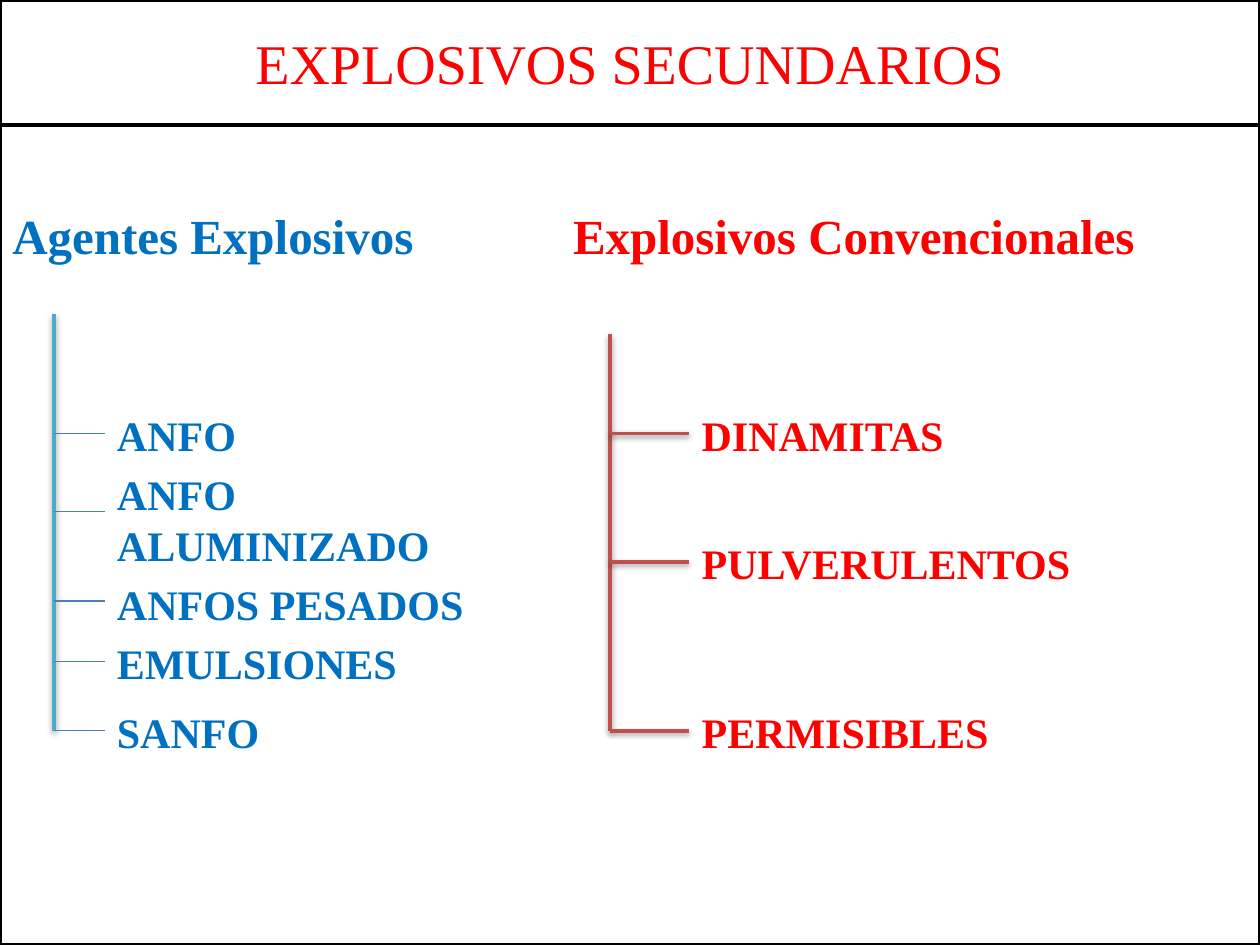
"""Build a slide that sorts secondary explosives into two bracketed lists."""
from lxml import etree
from pptx import Presentation
from pptx.dml.color import RGBColor
from pptx.enum.shapes import MSO_CONNECTOR, MSO_SHAPE
from pptx.enum.text import MSO_ANCHOR, PP_ALIGN
from pptx.oxml.ns import qn
from pptx.util import Inches, Pt

STRAIGHT = MSO_CONNECTOR.STRAIGHT
RECTANGLE = MSO_SHAPE.RECTANGLE
TOP, MIDDLE = MSO_ANCHOR.TOP, MSO_ANCHOR.MIDDLE
LEFT, CENTER = PP_ALIGN.LEFT, PP_ALIGN.CENTER
WHITE = RGBColor(0xFF, 0xFF, 0xFF)
BLACK = RGBColor(0x00, 0x00, 0x00)
RED = RGBColor(0xFF, 0x00, 0x00)
BLUE = RGBColor(0x00, 0x70, 0xC0)
TEAL = RGBColor(0x4B, 0xAC, 0xC6)
STEEL = RGBColor(0x4B, 0x7E, 0xBC)
BRICK = RGBColor(0xC0, 0x50, 0x4D)


def add_text(para, text, size, color, bold=True):
    span = para.add_run()
    span.text = text
    style = {"name": "Times New Roman", "size": Pt(size), "bold": bold}
    for name, value in style.items():
        setattr(span.font, name, value)
    span.font.color.rgb = color


def add_line(page, start, end, color, width, shadowed):
    line = page.shapes.add_connector(STRAIGHT, *map(Inches, start + end))
    line.line.color.rgb = color
    line.line.width = Pt(width)
    effects = etree.SubElement(line._element.spPr, qn("a:effectLst"))
    if shadowed:
        shadow = etree.SubElement(effects, qn("a:outerShdw"), blurRad="40000",
                                  dist="20000", dir="5400000", rotWithShape="0")
        shade = etree.SubElement(shadow, qn("a:srgbClr"), val="000000")
        etree.SubElement(shade, qn("a:alpha"), val="38000")


deck = Presentation()
deck.slide_width, deck.slide_height = Inches(10), Inches(7.5)
page = deck.slides.add_slide(deck.slide_layouts[5])

title = page.shapes.title
body = page.shapes.add_shape(RECTANGLE, 0, 0, Inches(1), Inches(1))
body.shadow.inherit = False
panels = [(title, 0, 0.99, MIDDLE, CENTER), (body, 0.99, 6.51, TOP, LEFT)]
for panel, top, height, anchor, alignment in panels:
    panel.left, panel.top = Inches(0), Inches(top)
    panel.width, panel.height = Inches(10), Inches(height)
    panel.fill.solid()
    panel.fill.fore_color.rgb = WHITE
    panel.line.color.rgb = BLACK
    panel.line.width = Pt(2)
    panel.text_frame.vertical_anchor = anchor
    panel.text_frame.paragraphs[0].alignment = alignment

add_text(title.text_frame.paragraphs[0], "EXPLOSIVOS SECUNDARIOS", 32, RED, False)

body.text_frame.margin_top = Inches(0.64)
headings = body.text_frame.paragraphs[0]
tabs = etree.SubElement(headings._p.get_or_add_pPr(), qn("a:tabLst"))
etree.SubElement(tabs, qn("a:tab"), pos=str(Inches(4.45)), algn="l")
add_text(headings, "Agentes Explosivos\t", 28, BLUE)
add_text(headings, "Explosivos Convencionales", 28, RED)

brackets = [
    {"x": 0.43, "label_x": 0.83, "top": 2.49, "text_color": BLUE,
     "stem_color": TEAL, "branch_color": STEEL, "branch_width": 0.75,
     "shadowed": False,
     "items": [("ANFO", 3.44, 3.2, 2.28, 0.5),
               ("ANFO ALUMINIZADO", 4.06, 3.67, 2.83, 0.91),
               ("ANFOS PESADOS", 4.77, 4.54, 3.43, 0.5),
               ("EMULSIONES", 5.25, 5.01, 2.6, 0.5),
               ("SANFO", 5.8, 5.56, 1.73, 0.5)]},
    {"x": 4.84, "label_x": 5.47, "top": 2.65, "text_color": RED,
     "stem_color": BRICK, "branch_color": BRICK, "branch_width": 2,
     "shadowed": True,
     "items": [("DINAMITAS", 3.44, 3.2, 2.52, 0.5),
               ("PULVERULENTOS", 4.46, 4.22, 3.23, 0.5),
               ("PERMISIBLES", 5.8, 5.56, 2.52, 0.5)]},
]
for bracket in brackets:
    x, label_x = bracket["x"], bracket["label_x"]
    add_line(page, (x, bracket["top"]), (x, 5.8), bracket["stem_color"], 2, True)
    for text, y, top, width, height in bracket["items"]:
        add_line(page, (x, y), (label_x, y), bracket["branch_color"],
                 bracket["branch_width"], bracket["shadowed"])
        box = page.shapes.add_textbox(*map(Inches, (label_x, top, width, height)))
        box.text_frame.word_wrap = True
        add_text(box.text_frame.paragraphs[0], text, 24, bracket["text_color"])

deck.save("out.pptx")
